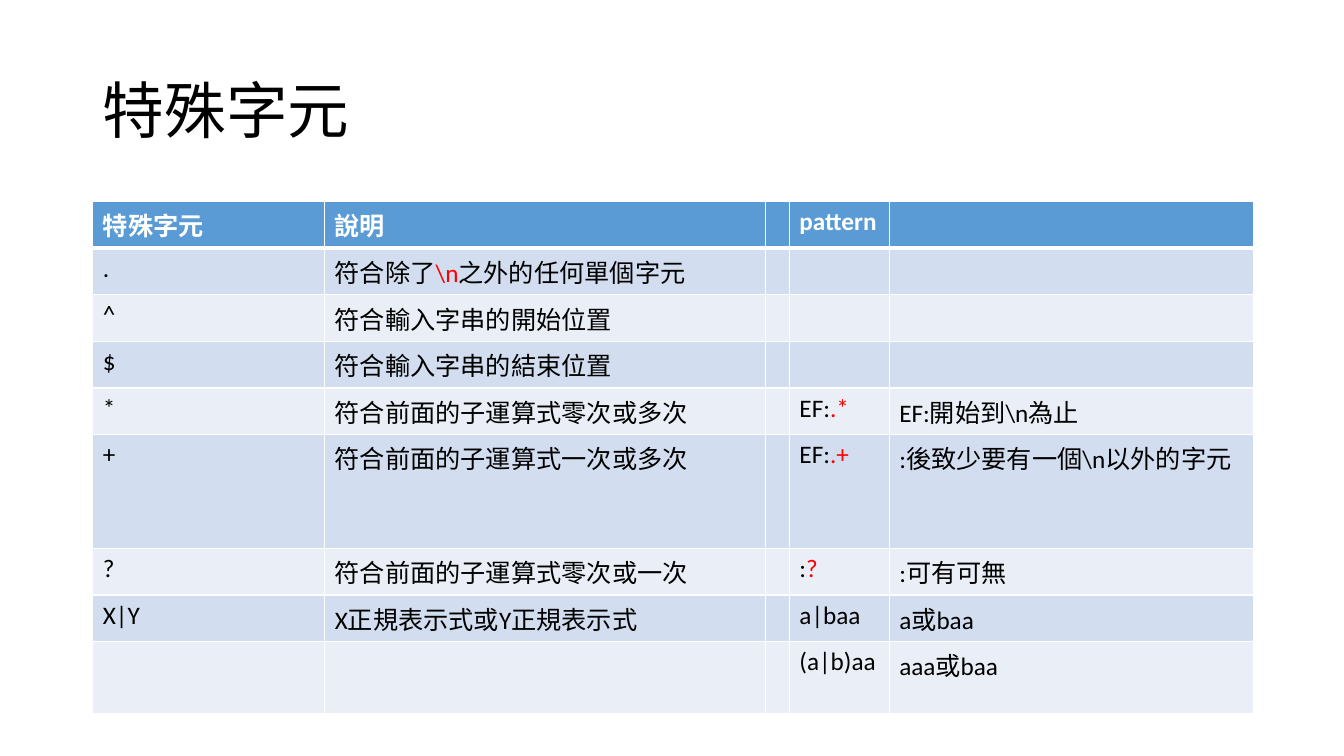
from lxml.etree import SubElement
from pptx import Presentation
from pptx.dml.color import RGBColor
from pptx.enum.text import MSO_ANCHOR as Anchor, PP_ALIGN as Align
from pptx.oxml.ns import qn
from pptx.util import Inches, Pt

FONT = "Calibri"
WHITE, BLACK, RED = "FFFFFF", "000000", "FF0000"
HEADER_FILL, BAND_FILLS = "5B9BD5", ("D2DEEF", "EAEFF7")
LEFT, WIDTH = 0.92, 11.5
COLUMN_WIDTHS = (2.3, 4.37, 0.23, 0.99, 3.61)
ROW_HEIGHTS = (0.46,) * 5 + (1.13, 0.46, 0.46, 0.71)

# Text between backticks is red
ROWS = (
    ("特殊字元", "說明", "", "pattern", ""),
    (".", r"符合除了`\n`之外的任何單個字元", "", "", ""),
    ("^", "符合輸入字串的開始位置", "", "", ""),
    ("$", "符合輸入字串的結束位置", "", "", ""),
    ("*", "符合前面的子運算式零次或多次", "", "EF:`.*`", r"EF:開始到\n為止"),
    ("+", "符合前面的子運算式一次或多次", "", "EF:`.+`", r":後致少要有一個\n以外的字元"),
    ("?", "符合前面的子運算式零次或一次", "", ":`?`", ":可有可無"),
    ("X|Y", "X正規表示式或Y正規表示式", "", "a|baa", "a或baa"),
    ("", "", "", "(a|b)aa", "aaa或baa"),
)


def color(hex_code):
    return RGBColor.from_string(hex_code)


def set_attributes(target, values):
    for name, value in values.items():
        setattr(target, name, value)


def add_run(paragraph, text, size, hex_code, bold=False):
    run = paragraph.add_run()
    run.text = text
    set_attributes(run.font, {"name": FONT, "size": Pt(size), "bold": bold})
    run.font.color.rgb = color(hex_code)


def add_title(slide, text):
    title = slide.shapes.title
    set_attributes(title, {"left": Inches(LEFT), "top": Inches(0.4),
                           "width": Inches(WIDTH), "height": Inches(1.45)})
    title.text_frame.vertical_anchor = Anchor.MIDDLE
    paragraph = title.text_frame.paragraphs[0]
    set_attributes(paragraph, {"alignment": Align.LEFT, "line_spacing": 0.9})
    add_run(paragraph, text, 44, BLACK)


def set_borders(cell, bottom_width, top_width):
    properties = cell._tc.get_or_add_tcPr()
    widths = {"a:lnL": 1, "a:lnR": 1, "a:lnT": top_width, "a:lnB": bottom_width}
    for tag, width in widths.items():
        line = SubElement(properties, qn(tag), w=str(Pt(width)))
        fill = SubElement(line, qn("a:solidFill"))
        SubElement(fill, qn("a:srgbClr"), val=WHITE)


def format_cell(cell, text, row_index):
    is_header = row_index == 0
    # Borders come before the fill in the cell properties
    set_borders(cell, 3 if is_header else 1, 3 if row_index == 1 else 1)
    cell.fill.solid()
    band_fill = BAND_FILLS[(row_index - 1) % 2]
    cell.fill.fore_color.rgb = color(HEADER_FILL if is_header else band_fill)
    text_color = WHITE if is_header else BLACK
    paragraph = cell.text_frame.paragraphs[0]
    for index, part in enumerate(text.split("`")):
        if part:
            add_run(paragraph, part, 18, RED if index % 2 else text_color, is_header)


def add_character_table(slide):
    table = slide.shapes.add_table(
        len(ROWS), len(COLUMN_WIDTHS), Inches(LEFT), Inches(2),
        Inches(WIDTH), Inches(sum(ROW_HEIGHTS))).table
    for column, width in zip(table.columns, COLUMN_WIDTHS):
        column.width = Inches(width)
    for row_index, (row, height, texts) in enumerate(zip(table.rows, ROW_HEIGHTS, ROWS)):
        row.height = Inches(height)
        for cell, text in zip(row.cells, texts):
            format_cell(cell, text, row_index)


def main():
    presentation = Presentation()
    set_attributes(presentation, {"slide_width": Inches(13.33),
                                  "slide_height": Inches(7.5)})
    slide = presentation.slides.add_slide(presentation.slide_layouts[5])
    add_title(slide, "特殊字元")
    add_character_table(slide)
    presentation.save("out.pptx")


if __name__ == "__main__":
    main()
